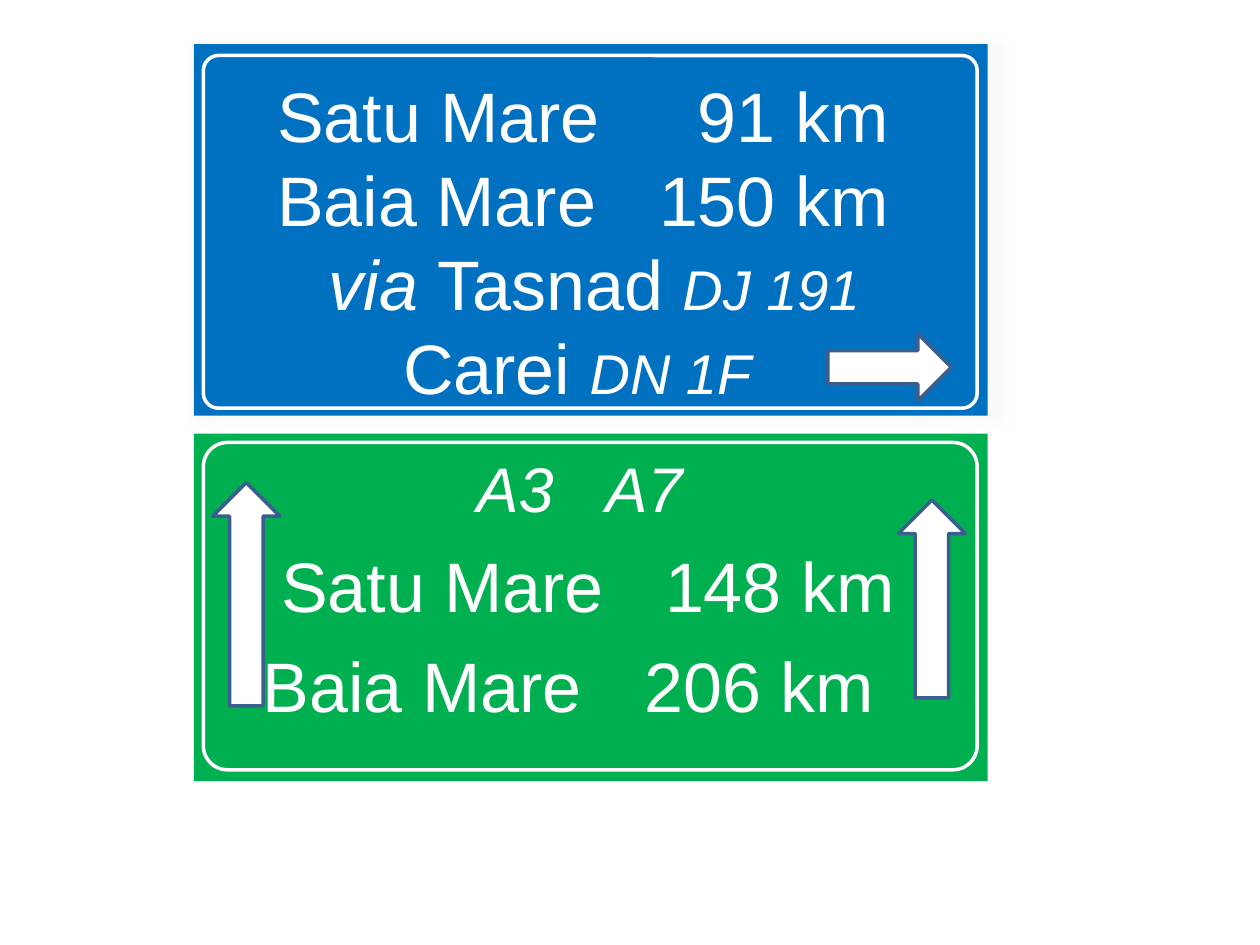
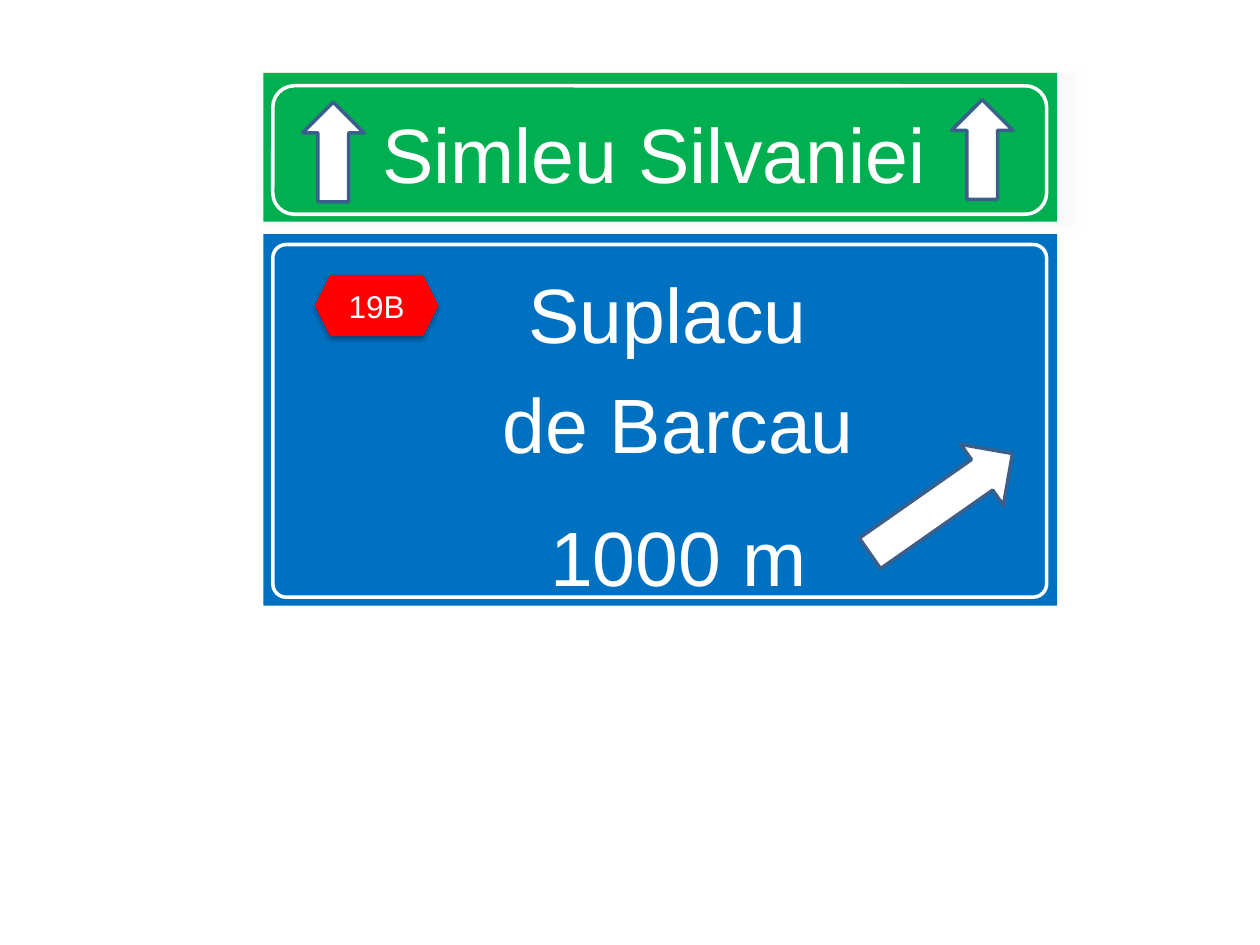
from dataclasses import dataclass

from lxml.etree import SubElement
from pptx import Presentation
from pptx.dml.color import RGBColor
from pptx.enum.shapes import MSO_SHAPE as Preset
from pptx.enum.text import MSO_ANCHOR as Anchor, PP_ALIGN as Align
from pptx.oxml.ns import qn
from pptx.util import Cm, Pt


# Theme and records
@dataclass(frozen=True)
class Theme:
    font: str = "Arial"
    white: str = "FFFFFF"
    blue: str = "0070C0"
    green: str = "00B050"
    red: str = "FF0000"
    outline: str = "3A5F8C"
    pale: str = "F2F2F2"
    black: str = "000000"
    badge: int = 18
    road: int = 32
    motorway: int = 36
    place: int = 40
    town: int = 44
    stroke: float = 2


THEME = Theme()
SIGN_WIDTH, BORDER_WIDTH, BORDER_INSET = 16, 15.6, 0.19


@dataclass(frozen=True)
class Span:
    text: str
    size: int | None = None
    italic: bool | None = None


@dataclass(frozen=True)
class Line:
    spans: tuple[Span, ...]
    size: int = THEME.place
    before: float = 0
    height: float | None = None
    tabs: tuple[tuple[float, str], ...] = ()


@dataclass(frozen=True)
class Sign:
    left: float
    top: float
    height: float
    color: str
    shadow: str
    insets: tuple[float, float, float, float]
    border_top: float
    border_height: float
    rounding: float
    lines: tuple[Line, ...]
    anchor: Anchor = Anchor.TOP


@dataclass(frozen=True)
class Arrow:
    preset: Preset
    left: float
    top: float
    width: float
    height: float
    rotation: float = 0


@dataclass(frozen=True)
class Badge:
    left: float
    top: float
    text: str
    width: float = 2.49
    height: float = 1.24


@dataclass(frozen=True)
class Panel:
    signs: tuple[Sign, ...]
    arrows: tuple[Arrow, ...]
    badges: tuple[Badge, ...] = ()


def distance(place: str, length: str, start: float, end: float, **style) -> Line:
    """A place name and its distance, the distance flush right."""
    return Line((Span(f"\t{place}\t{length}"),), tabs=((start, "l"), (end, "r")), **style)


# Drawing
def add_preset(page, preset: Preset, left: float, top: float, width: float, height: float,
               fill: str | None = None, line: str | None = None):
    shape = page.shapes.add_shape(preset, Cm(left), Cm(top), Cm(width), Cm(height))
    shape.shadow.inherit = False
    if fill:
        shape.fill.solid()
        shape.fill.fore_color.rgb = RGBColor.from_string(fill)
    else:
        shape.fill.background()
    if line:
        shape.line.color.rgb = RGBColor.from_string(line)
        shape.line.width = Pt(THEME.stroke)
    else:
        shape.line.fill.background()
    return shape


def add_shadow(shape, color: str, alpha: int, **settings: int) -> None:
    effects = shape._element.spPr.find(qn("a:effectLst"))
    shadow = SubElement(effects, qn("a:outerShdw"), rotWithShape="0",
                        **{name: str(value) for name, value in settings.items()})
    tint = SubElement(shadow, qn("a:srgbClr"), val=color)
    SubElement(tint, qn("a:alpha"), val=str(alpha * 1000))


def write(shape, lines: tuple[Line, ...], insets: tuple[float, ...], anchor: Anchor) -> None:
    frame = shape.text_frame
    frame.word_wrap = True
    frame.vertical_anchor = anchor
    (frame.margin_left, frame.margin_top,
     frame.margin_right, frame.margin_bottom) = map(Cm, insets)
    for index, line in enumerate(lines):
        para = frame.add_paragraph() if index else frame.paragraphs[0]
        para.alignment = Align.LEFT if line.tabs else Align.CENTER
        if line.height:
            para.line_spacing = Pt(line.height)
        para.space_before = Pt(line.before)
        if line.tabs:
            stops = SubElement(para._p.get_or_add_pPr(), qn("a:tabLst"))
            for position, kind in line.tabs:
                SubElement(stops, qn("a:tab"), pos=str(Cm(position)), algn=kind)
        para.font.name = THEME.font
        para.font.size = Pt(line.size)
        para.font.color.rgb = RGBColor.from_string(THEME.white)
        for span in line.spans:
            run = para.add_run()
            run.text = span.text
            if span.size:
                run.font.size = Pt(span.size)
            if span.italic:
                run.font.italic = True


def draw_sign(page, sign: Sign) -> None:
    board = add_preset(page, Preset.RECTANGLE, sign.left, sign.top,
                       SIGN_WIDTH, sign.height, sign.color)
    add_shadow(board, sign.shadow, 40, blurRad=Pt(5), sx=102000, sy=102000, algn="tl")
    write(board, sign.lines, sign.insets, sign.anchor)


def draw_border(page, sign: Sign) -> None:
    border = add_preset(page, Preset.ROUNDED_RECTANGLE, sign.left + BORDER_INSET,
                        sign.border_top, BORDER_WIDTH, sign.border_height, line=THEME.white)
    border.adjustments[0] = sign.rounding


def draw_arrow(page, arrow: Arrow) -> None:
    shape = add_preset(page, arrow.preset, arrow.left, arrow.top, arrow.width,
                       arrow.height, THEME.white, THEME.outline)
    shape.rotation = arrow.rotation


def draw_badge(page, badge: Badge) -> None:
    shape = add_preset(page, Preset.HEXAGON, badge.left, badge.top,
                       badge.width, badge.height, THEME.red)
    add_shadow(shape, THEME.black, 35, blurRad=Pt(3), dist=Pt(2), dir=5400000)
    write(shape, (Line((Span(badge.text),), THEME.badge),), (0.25, 0.13, 0.25, 0.13),
          Anchor.MIDDLE)


# Distances and the two routes
distances = Panel(
    signs=(
        Sign(3.91, 0.89, 7.49, THEME.blue, THEME.pale, (0, 0.58, 0.25, 0.13), 1.12, 7.11, 0.043, (
            distance("Satu Mare", "91 km", 1.68, 14, height=48),
            distance("Baia Mare", "150 km", 1.68, 14, height=48),
            Line((Span(" "), Span("via ", italic=True), Span("Tasnad "),
                  Span("DJ 191", THEME.road, True)), height=48),
            Line((Span("Carei "), Span("DN 1F ", THEME.road, True)), height=48),
        )),
        Sign(3.91, 8.74, 7.01, THEME.green, THEME.white, (0.2, 0.33, 0.25, 0.61), 8.92, 6.6, 0.074, (
            Line((Span("\tA3\tA7", italic=True),), THEME.motorway,
                 tabs=((5.5, "l"), (8.1, "l"))),
            distance("Satu Mare", "148 km", 1.56, 13.92, before=9.5),
            distance("Baia Mare", "206 km", 1.19, 13.51, before=9.5),
        )),
    ),
    arrows=(
        Arrow(Preset.RIGHT_ARROW, 16.69, 6.73, 2.49, 1.35),
        Arrow(Preset.DOWN_ARROW, 4.29, 9.73, 1.35, 4.5, 180),
        Arrow(Preset.DOWN_ARROW, 18.11, 10.08, 1.35, 3.99, 180),
    ),
)

# Exit announcement
exit_ahead = Panel(
    signs=(
        Sign(5.31, 1.47, 3, THEME.green, THEME.pale, (0, 0.33, 0.25, 0.13), 1.73, 2.59, 0.167,
             (Line((Span("Simleu Silvaniei"),), THEME.town),), Anchor.MIDDLE),
        Sign(5.31, 4.72, 7.49, THEME.blue, THEME.white, (0.99, 0.66, 0.25, 0.61), 4.93, 7.11, 0.038, (
            Line((Span("Suplacu "),), THEME.town),
            Line((Span("de Barcau"),), THEME.town, before=10),
            Line((Span("1000 m"),), THEME.town, before=23),
        )),
    ),
    arrows=(
        Arrow(Preset.RIGHT_ARROW, 17.22, 9.4, 3.51, 1.5, 325),
        Arrow(Preset.UP_ARROW, 6.1, 2.06, 1.24, 2.01),
        Arrow(Preset.UP_ARROW, 19.18, 2.01, 1.24, 2.01),
    ),
    badges=(Badge(6.35, 5.54, "19B"),),
)


def main() -> None:
    deck = Presentation()
    deck.slide_width, deck.slide_height = Cm(25.4), Cm(19.05)
    for panel in (distances, exit_ahead):
        page = deck.slides.add_slide(deck.slide_layouts[6])
        for items, draw in ((panel.signs, draw_sign), (panel.arrows, draw_arrow),
                            (panel.badges, draw_badge), (panel.signs, draw_border)):
            for item in items:
                draw(page, item)
    deck.save("out.pptx")


if __name__ == "__main__":
    main()
